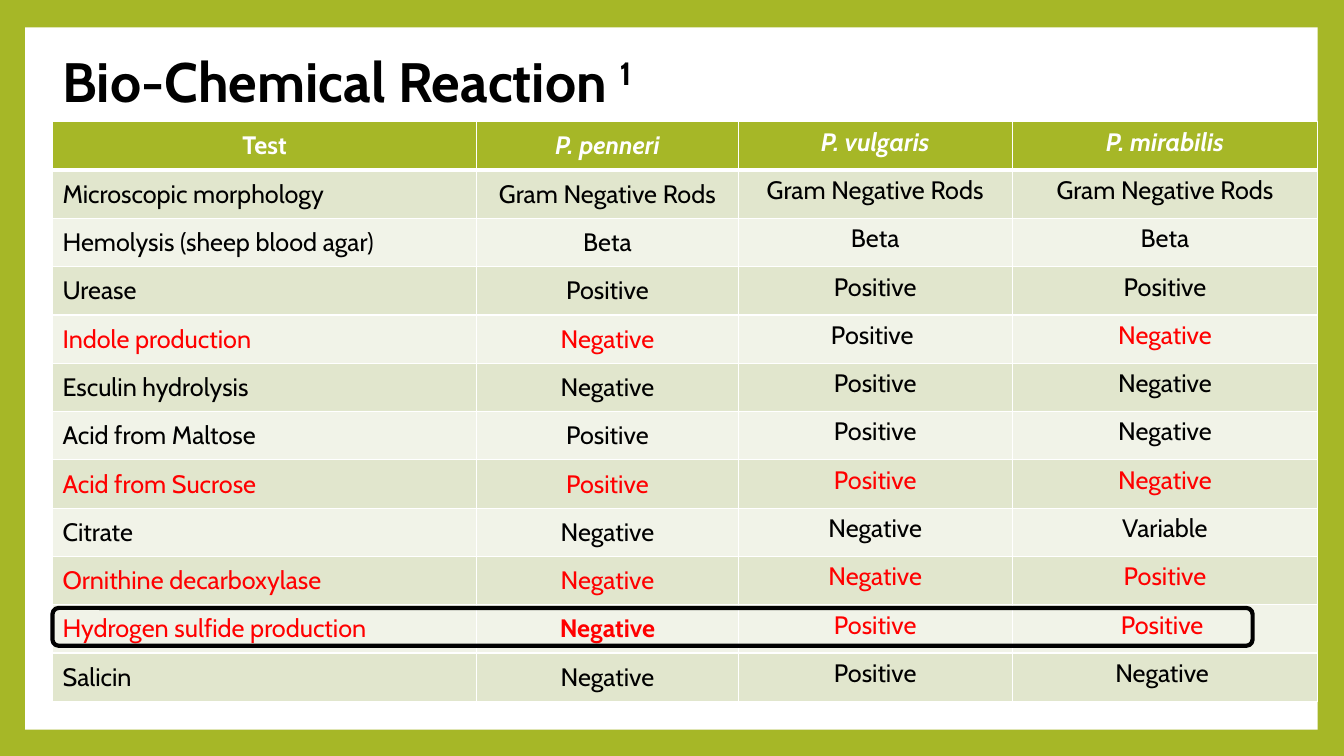
"""Build the biochemical reaction comparison slide for three Proteus species."""
from pptx import Presentation
from pptx.dml.color import RGBColor
from pptx.enum.shapes import MSO_SHAPE as SHAPE
from pptx.enum.text import MSO_ANCHOR as ANCHOR, MSO_AUTO_SIZE as FIT, PP_ALIGN as ALIGN
from pptx.oxml import parse_xml
from pptx.oxml.ns import nsdecls
from pptx.util import Pt

PX = 9525
THEME = {
    "font": "Cabin", "title": 39.6, "body": 18,
    "green": "A6B727", "white": "FFFFFF", "black": "000000", "red": "FF0000",
    "bands": ("F1F3E8", "E1E6CD"),
}
COL_WIDTHS = (404, 249, 261, 291)
ROW_HEIGHT = 46
RODS = "Gram Negative Rods"
HEADER = ("Test", "P. penneri", "P. vulgaris", "P. mirabilis")
REACTIONS = (
    (("Microscopic morphology", RODS, RODS, RODS), ()),
    (("Hemolysis (sheep blood agar)", "Beta", "Beta", "Beta"), ()),
    (("Urease", "Positive", "Positive", "Positive"), ()),
    (("Indole production", "Negative", "Positive ", "Negative"), (0, 1, 3)),
    (("Esculin hydrolysis", "Negative", "Positive", "Negative"), ()),
    (("Acid from Maltose", "Positive", "Positive", "Negative"), ()),
    (("Acid from Sucrose", "Positive", "Positive", "Negative"), (0, 1, 2, 3)),
    (("Citrate", "Negative", "Negative", "Variable"), ()),
    (("Ornithine decarboxylase", "Negative", "Negative", "Positive"), (0, 1, 2, 3)),
    (("Hydrogen sulfide production", "Negative", "Positive", "Positive "), (0, 1, 2, 3)),
    (("Salicin", "Negative", "Positive", "Negative "), ()),
)
SULFIDE_ROW = 10


def style_run(r, size, color, bold=False, italic=False):
    r.font.name = THEME["font"]
    r.font.size = Pt(size)
    r.font.bold = bold
    r.font.italic = italic
    r.font.color.rgb = RGBColor.from_string(THEME[color])


def set_borders(cell, top, bottom):
    tc_pr = cell._tc.get_or_add_tcPr()
    for i, (side, width) in enumerate((("L", 1), ("R", 1), ("T", top), ("B", bottom))):
        tc_pr.insert(i, parse_xml(
            f'<a:ln{side} {nsdecls("a")} w="{Pt(width)}"><a:solidFill>'
            f'<a:srgbClr val="{THEME["white"]}"/></a:solidFill></a:ln{side}>'))


prs = Presentation()
prs.slide_width, prs.slide_height = 1280 * PX, 720 * PX
s = prs.slides.add_slide(prs.slide_layouts[5])
s.background.fill.solid()
s.background.fill.fore_color.rgb = RGBColor.from_string(THEME["green"])

panel = s.shapes.add_shape(SHAPE.RECTANGLE, 24 * PX, 26 * PX, 1231 * PX, 669 * PX)
panel.shadow.inherit = False
panel.fill.solid()
panel.fill.fore_color.rgb = RGBColor.from_string(THEME["white"])
panel.line.fill.background()
s.shapes.title.element.addprevious(panel.element)

title = s.shapes.title
title.left, title.top, title.width, title.height = 50 * PX, 46 * PX, 1037 * PX, 69 * PX
tf = title.text_frame
tf.word_wrap = True
tf.auto_size = FIT.NONE
tf.vertical_anchor = ANCHOR.MIDDLE
p = tf.paragraphs[0]
p.alignment = ALIGN.LEFT
p.line_spacing = 0.9
for text in ("Bio-Chemical Reaction ", "1"):
    r = p.add_run()
    r.text = text
    style_run(r, THEME["title"], "black", bold=True)
r.font._element.set("baseline", "30000")

rows = ((HEADER, ()),) + REACTIONS
table = s.shapes.add_table(len(rows), len(HEADER), 50 * PX, 116 * PX,
                           sum(COL_WIDTHS) * PX, len(rows) * ROW_HEIGHT * PX).table
for col, width in zip(table.columns, COL_WIDTHS):
    col.width = width * PX
for i, (texts, red_cols) in enumerate(rows):
    table.rows[i].height = ROW_HEIGHT * PX
    for j, text in enumerate(texts):
        cell = table.cell(i, j)
        cell.fill.solid()
        cell.fill.fore_color.rgb = RGBColor.from_string(
            THEME["bands"][i % 2] if i else THEME["green"])
        set_borders(cell, 3 if i == 1 else 1, 3 if i == 0 else 1)
        cell.vertical_anchor = ANCHOR.MIDDLE if j < 2 else ANCHOR.TOP
        p = cell.text_frame.paragraphs[0]
        p.text = text
        p.alignment = ALIGN.LEFT if i and j == 0 else ALIGN.CENTER
        color = "white" if i == 0 else "red" if j in red_cols else "black"
        style_run(p.runs[0], THEME["body"], color,
                  bold=i == 0 or (i, j) == (SULFIDE_ROW, 1), italic=i == 0 and j > 0)

frame = s.shapes.add_shape(SHAPE.ROUNDED_RECTANGLE, 50 * PX, 579 * PX, 1143 * PX, 36 * PX)
frame.shadow.inherit = False
frame.fill.background()
frame.line.color.rgb = RGBColor.from_string(THEME["black"])
frame.line.width = Pt(3)

prs.save("out.pptx")
